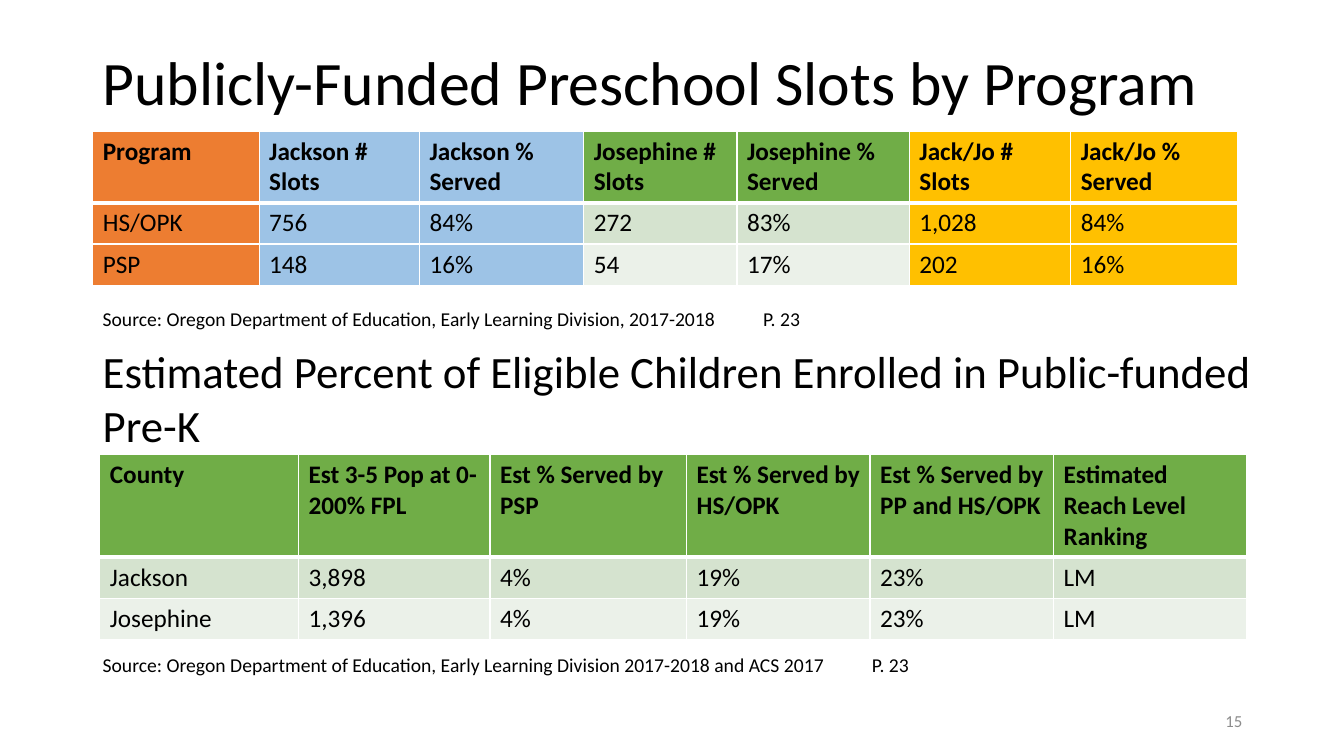
from lxml import etree
from pptx import Presentation
from pptx.dml.color import RGBColor
from pptx.enum.text import MSO_ANCHOR, PP_ALIGN
from pptx.oxml.ns import qn
from pptx.util import Inches, Pt

TOP, MIDDLE = MSO_ANCHOR.TOP, MSO_ANCHOR.MIDDLE
LEFT, RIGHT = PP_ALIGN.LEFT, PP_ALIGN.RIGHT

# Content
FONT = "Calibri"
BLACK, WHITE, GREY = "000000", "FFFFFF", "8C8C8C"
ORANGE, BLUE, GREEN, GOLD = "ED7D31", "9DC3E6", "70AD47", "FFC000"
BAND_1, BAND_2 = "D5E3CF", "EBF1E9"
GREEN_COLUMN = (GREEN, BAND_1, BAND_2)

TEXTS = [
    dict(text="Publicly-Funded Preschool Slots by Program",
         box=(0.92, 0.4, 11.5, 0.9), size=44.1, anchor=MIDDLE, spacing=0.9),
    dict(text="Source: Oregon Department of Education, Early Learning Division, "
              "2017-2018\tP. 23",
         box=(0.92, 3, 11.36, 0.34), size=14, tab=6.55),
    dict(text="Estimated Percent of Eligible Children Enrolled in "
              "Public-funded Pre-K",
         box=(0.92, 3.36, 11.87, 1.18), size=32),
    dict(text="Source: Oregon Department of Education, Early Learning Division "
              "2017-2018 and ACS 2017\tP. 23",
         box=(0.92, 6.43, 11.36, 0.34), size=14, tab=7.63),
    dict(text="15", box=(9.42, 6.95, 3, 0.4), size=12, anchor=MIDDLE,
         align=RIGHT, color=GREY),
]

TABLES = [
    dict(
        at=(0.92, 1.3),
        widths=[1.65, 1.59, 1.63, 1.52, 1.71, 1.6, 1.66],
        heights=[0.69, 0.41, 0.41],
        fills=[(ORANGE,) * 3, (BLUE,) * 3, (BLUE,) * 3, GREEN_COLUMN,
               GREEN_COLUMN, (GOLD,) * 3, (GOLD,) * 3],
        rows=[
            ["Program", "Jackson # Slots", "Jackson % Served",
             "Josephine # Slots", "Josephine % Served",
             "Jack/Jo # Slots", "Jack/Jo % Served"],
            ["HS/OPK", "756", "84%", "272", "83%", "1,028", "84%"],
            ["PSP", "148", "16%", "54", "17%", "202", "16%"],
        ]),
    dict(
        at=(0.99, 4.51),
        widths=[1.97, 1.9, 1.95, 1.82, 1.82, 1.91],
        heights=[0.99, 0.41, 0.41],
        fills=[GREEN_COLUMN] * 6,
        rows=[
            ["County", "Est 3-5 Pop at 0-200% FPL", "Est % Served by PSP",
             "Est % Served by HS/OPK", "Est % Served by PP and HS/OPK",
             "Estimated Reach Level Ranking"],
            ["Jackson", "3,898", "4%", "19%", "23%", "LM"],
            ["Josephine", "1,396", "4%", "19%", "23%", "LM"],
        ]),
]


def rgb(value):
    return RGBColor.from_string(value)


def set_font(font, size, color=BLACK, bold=False):
    values = dict(name=FONT, size=Pt(size), bold=bold)
    for name, value in values.items():
        setattr(font, name, value)
    font.color.rgb = rgb(color)


def add_tab(p, position):
    tabs = etree.SubElement(p._p.get_or_add_pPr(), qn("a:tabLst"))
    etree.SubElement(tabs, qn("a:tab"), pos=str(Inches(position)), algn="l")


def add_text(slide, text, box, size, color=BLACK, anchor=TOP, align=LEFT,
             spacing=None, tab=None):
    tf = slide.shapes.add_textbox(*map(Inches, box)).text_frame
    for name, value in dict(word_wrap=True, vertical_anchor=anchor).items():
        setattr(tf, name, value)
    p = tf.paragraphs[0]
    p.alignment = align
    if spacing:
        p.line_spacing = spacing
    if tab:
        add_tab(p, tab)
    r = p.add_run()
    r.text = text
    set_font(r.font, size, color)


def set_borders(cell, **widths):
    tc_pr = cell._tc.get_or_add_tcPr()
    for side, width in widths.items():
        ln = etree.SubElement(tc_pr, qn(f"a:ln{side}"), w=str(Pt(width)))
        fill = etree.SubElement(ln, qn("a:solidFill"))
        etree.SubElement(fill, qn("a:srgbClr"), val=WHITE)


def add_table(slide, at, widths, heights, fills, rows):
    size = (sum(widths), sum(heights))
    table = slide.shapes.add_table(len(rows), len(widths),
                                   *map(Inches, at + size)).table
    table.horz_banding = False
    for column, width in zip(table.columns, widths):
        column.width = Inches(width)
    for i, (row, height) in enumerate(zip(rows, heights)):
        table.rows[i].height = Inches(height)
        for j, text in enumerate(row):
            cell = table.cell(i, j)
            # The rule under the header is thicker than the others
            set_borders(cell, L=1, R=1, T=3 if i == 1 else 1,
                        B=3 if i == 0 else 1)
            cell.fill.solid()
            cell.fill.fore_color.rgb = rgb(fills[j][i])
            r = cell.text_frame.paragraphs[0].add_run()
            r.text = text
            set_font(r.font, 18, bold=i == 0)


def main():
    prs = Presentation()
    prs.slide_width, prs.slide_height = Inches(13.33), Inches(7.5)
    slide = prs.slides.add_slide(prs.slide_layouts[6])
    for table in TABLES:
        add_table(slide, **table)
    for text in TEXTS:
        add_text(slide, **text)
    prs.save("out.pptx")


if __name__ == "__main__":
    main()
